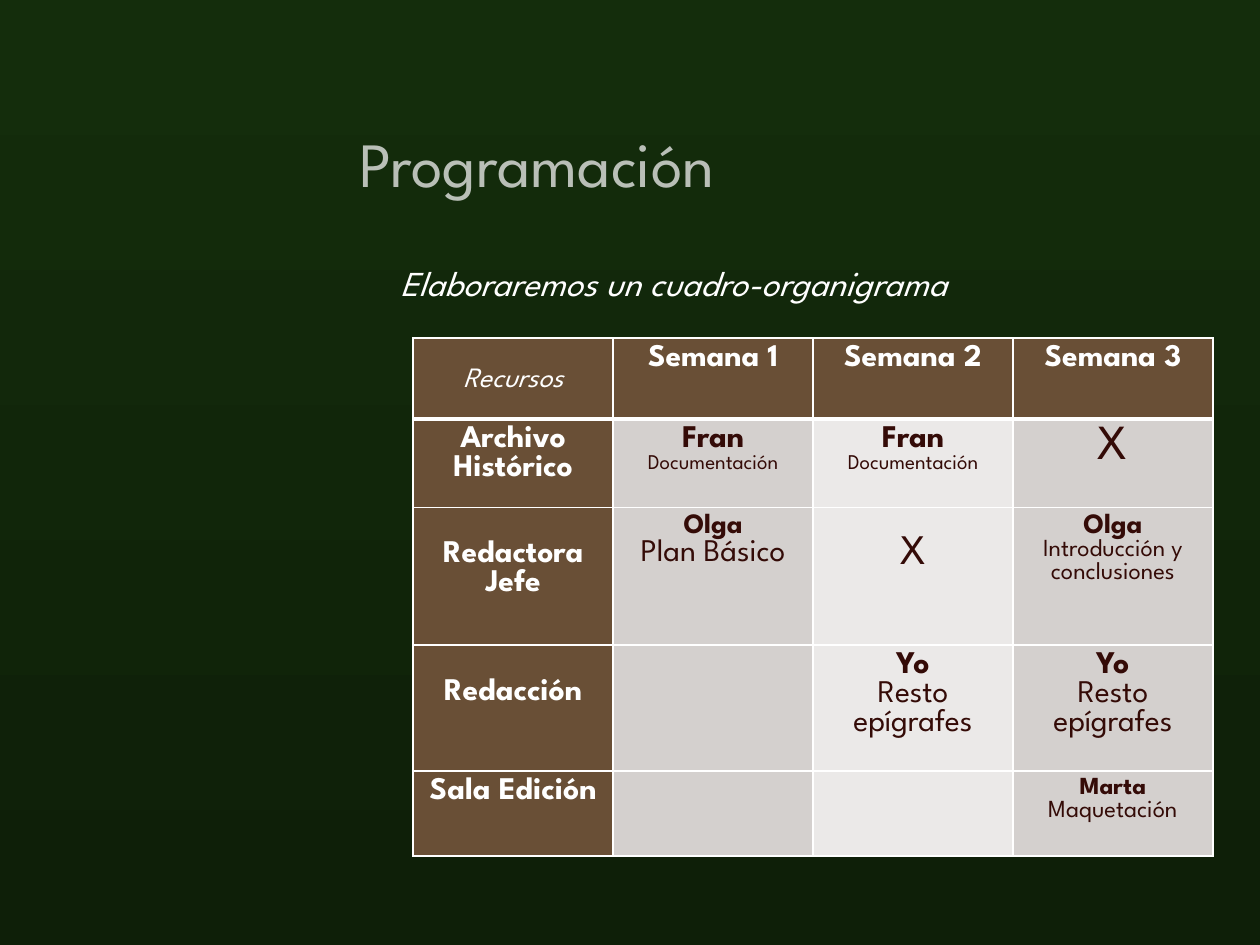
from lxml import etree
from pptx import Presentation
from pptx import util as u
from pptx.dml.color import RGBColor
from pptx.enum import text
from pptx.oxml.ns import qn

COLORS = {
    "bg_top": "142D0C", "bg_bottom": "0E1F08", "title": "B9BFB7",
    "white": "FFFFFF", "dark": "340B07", "brown": "694F36",
    "grey": "D4D0CE", "light": "EBE9E8",
}
COLUMN_FILLS = ["brown", "grey", "light", "grey"]
COLUMN_WIDTH = 4.03
ROW_HEIGHTS = [1.64, 1.71, 2.77, 2.45, 1.71]


def bold(words, size=18):
    return words, {"size": size, "bold": True}


def plain(words, size=18):
    return words, {"size": size}


def cell(*lines, gap=0):
    """Pair the lines with the size in points of the gap above them."""
    return lines, gap


ROWS = [
    [cell(("Recursos", {"size": 16, "italic": True}), gap=16)]
    + [cell(bold(f"Semana {n}")) for n in (1, 2, 3)],
    [cell(bold("Archivo"), bold("Histórico")),
     cell(bold("Fran"), plain("Documentación", 12)),
     cell(bold("Fran"), plain("Documentación", 12)),
     cell(plain("X", 28))],
    [cell(bold("Redactora Jefe"), gap=18),
     cell(bold("Olga", 16), plain("Plan Básico")),
     cell(plain("X", 24), gap=14),
     cell(bold("Olga", 16), plain("Introducción y conclusiones", 14))],
    [cell(bold("Redacción"), gap=18),
     cell(),
     cell(bold("Yo"), plain("Resto epígrafes")),
     cell(bold("Yo"), plain("Resto epígrafes"))],
    [cell(bold("Sala Edición")),
     cell(),
     cell(),
     cell(bold("Marta", 14), plain("Maquetación", 14))],
]


def rgb(name):
    return RGBColor.from_string(COLORS[name])


class Deck:
    """Holds the font and the current slide."""

    font = "League Spartan"

    def __init__(self, width, height):
        self.prs = Presentation()
        self.prs.slide_width, self.prs.slide_height = u.Cm(width), u.Cm(height)
        self.s = self.prs.slides.add_slide(self.prs.slide_layouts[6])

    def background(self, top, bottom):
        fill = self.s.background.fill
        fill.gradient()
        fill.gradient_angle = 270
        for stop, name in zip(fill.gradient_stops, (top, bottom)):
            stop.color.rgb = rgb(name)

    def run(self, p, words, color, fmt):
        r = p.add_run()
        r.text = words
        r.font.name = self.font
        r.font.color.rgb = rgb(color)
        values = {"bold": False, "italic": False, **fmt}
        values["size"] = u.Pt(values["size"])
        for key, value in values.items():
            setattr(r.font, key, value)

    def text(self, box, words, color, anchor=text.MSO_ANCHOR.TOP, **fmt):
        tf = self.s.shapes.add_textbox(*map(u.Cm, box)).text_frame
        tf.word_wrap = True
        tf.vertical_anchor = anchor
        self.run(tf.paragraphs[0], words, color, fmt)

    def borders(self, c, bottom_width):
        tcPr = c._tc.get_or_add_tcPr()
        for i, side in enumerate("LRTB"):
            width = bottom_width if side == "B" else 1
            ln = etree.Element(qn(f"a:ln{side}"), w=str(u.Pt(width)))
            fill = etree.SubElement(ln, qn("a:solidFill"))
            etree.SubElement(fill, qn("a:srgbClr"), val=COLORS["white"])
            tcPr.insert(i, ln)

    def fill_cell(self, c, lines, gap, fill, color, bottom_width):
        c.fill.solid()
        c.fill.fore_color.rgb = rgb(fill)
        self.borders(c, bottom_width)
        c.margin_top = u.Cm(0.13 + 0.03 * gap)
        tf = c.text_frame
        for i, (words, fmt) in enumerate(lines):
            p = tf.add_paragraph() if i else tf.paragraphs[0]
            p.alignment = text.PP_ALIGN.CENTER
            self.run(p, words, color, fmt)

    def table(self, left, top, rows):
        width = COLUMN_WIDTH * len(COLUMN_FILLS)
        box = map(u.Cm, (left, top, width, sum(ROW_HEIGHTS)))
        t = self.s.shapes.add_table(len(rows), len(COLUMN_FILLS), *box).table
        t.horz_banding = False
        for column in t.columns:
            column.width = u.Cm(COLUMN_WIDTH)
        for i, row in enumerate(rows):
            t.rows[i].height = u.Cm(ROW_HEIGHTS[i])
            bottom_width = 3 if i == 0 else 1
            for j, (lines, gap) in enumerate(row):
                fill = "brown" if i == 0 else COLUMN_FILLS[j]
                color = "white" if fill == "brown" else "dark"
                self.fill_cell(t.cell(i, j), lines, gap, fill, color,
                               bottom_width)


def main():
    deck = Deck(25.4, 19.05)
    deck.background("bg_top", "bg_bottom")
    deck.text((6.99, 0.97, 17.15, 3.18), "Programación", "title",
              anchor=text.MSO_ANCHOR.BOTTOM, size=36)
    deck.text((7.82, 5.15, 16.97, 1.2), "Elaboraremos un cuadro-organigrama",
              "white", size=20, italic=True)
    deck.table(8.33, 6.81, ROWS)
    deck.prs.save("out.pptx")


if __name__ == "__main__":
    main()
